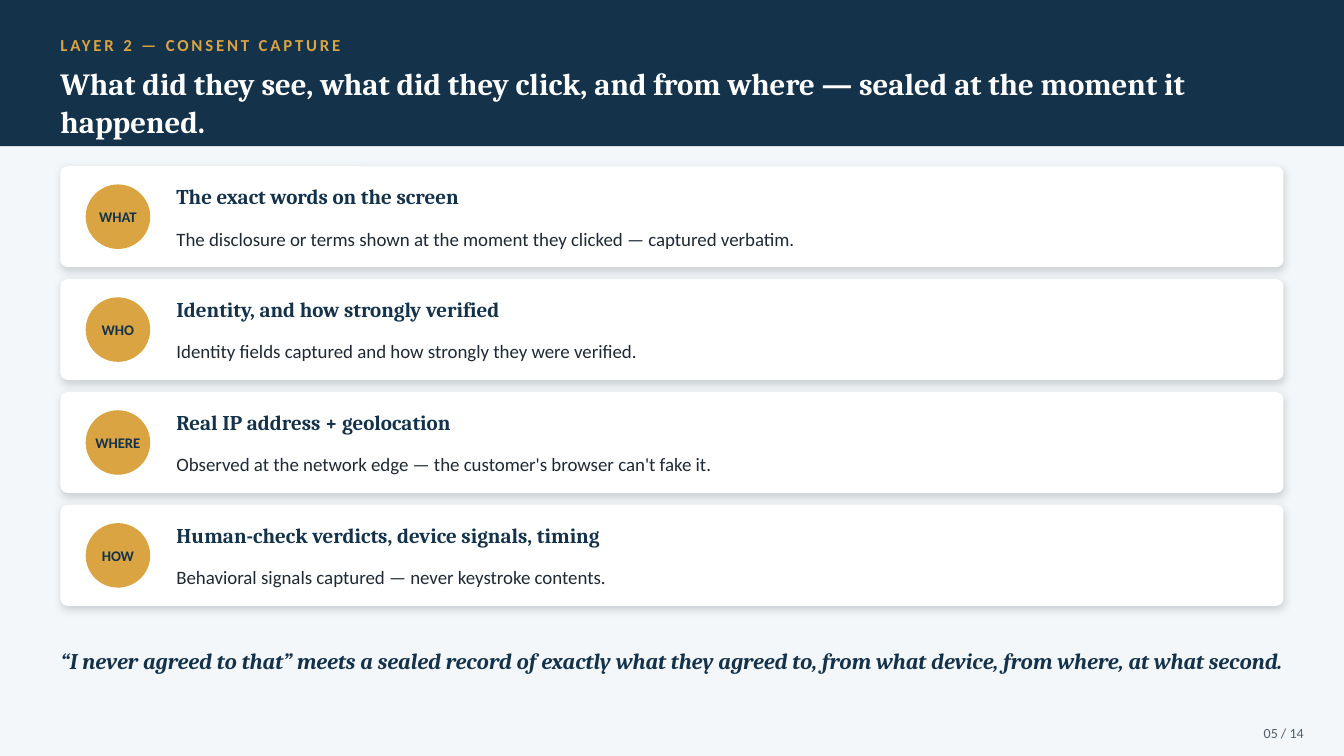
from dataclasses import dataclass

from lxml import etree
from pptx import Presentation
from pptx.dml.color import RGBColor
from pptx.enum.shapes import MSO_SHAPE
from pptx.enum.text import MSO_ANCHOR, PP_ALIGN
from pptx.oxml.ns import qn
from pptx.util import Inches, Pt

RECTANGLE = MSO_SHAPE.RECTANGLE
ROUNDED = MSO_SHAPE.ROUNDED_RECTANGLE
OVAL = MSO_SHAPE.OVAL
TOP, MIDDLE = MSO_ANCHOR.TOP, MSO_ANCHOR.MIDDLE
LEFT, CENTER, RIGHT = PP_ALIGN.LEFT, PP_ALIGN.CENTER, PP_ALIGN.RIGHT


@dataclass(frozen=True)
class Style:
    font: str
    size: float
    color: str
    bold: bool = False
    italic: bool = False
    tracking: float = 0
    line_spacing: float = 1.0


@dataclass(frozen=True)
class Theme:
    navy: str = "14324A"
    gold: str = "D9A441"
    white: str = "FFFFFF"
    ink: str = "1F2933"
    background: str = "F4F7F9"
    eyebrow: Style = Style("Calibri", 12, gold, bold=True, tracking=2)
    title: Style = Style("Cambria", 22, white, bold=True, line_spacing=1.05)
    badge: Style = Style("Calibri", 10.5, navy, bold=True)
    heading: Style = Style("Cambria", 15, navy, bold=True)
    body: Style = Style("Calibri", 13.5, ink, line_spacing=1.1)
    quote: Style = Style("Cambria", 16, navy, bold=True, italic=True)
    page_number: Style = Style("Calibri", 10, "52606D")


THEME = Theme()
MARGIN, CONTENT_WIDTH = 0.6, 12.13
CARD_TOP, CARD_HEIGHT, CARD_PITCH = 1.65, 1.0, 1.12
BADGE_SIZE = 0.64
TEXT_LEFT, TEXT_WIDTH = 1.75, 10.63

CARDS = [
    ("WHAT", "The exact words on the screen",
     "The disclosure or terms shown at the moment they clicked — captured verbatim."),
    ("WHO", "Identity, and how strongly verified",
     "Identity fields captured and how strongly they were verified."),
    ("WHERE", "Real IP address + geolocation",
     "Observed at the network edge — the customer's browser can't fake it."),
    ("HOW", "Human-check verdicts, device signals, timing",
     "Behavioral signals captured — never keystroke contents."),
]


def write_text(shape, text, style, align=LEFT, anchor=MIDDLE, wrap=True):
    frame = shape.text_frame
    frame.text = text
    frame.word_wrap = wrap
    frame.vertical_anchor = anchor
    frame.margin_left = frame.margin_right = 0
    frame.margin_top = frame.margin_bottom = 0
    para = frame.paragraphs[0]
    para.alignment = align
    para.line_spacing = style.line_spacing
    span = para.runs[0]
    span.font.name = style.font
    span.font.size = Pt(style.size)
    span.font.bold = style.bold
    span.font.italic = style.italic
    span.font.color.rgb = RGBColor.from_string(style.color)
    if style.tracking:
        span.font._element.set("spc", str(int(style.tracking * 100)))


def add_text(slide, left, top, width, height, text, style, align=LEFT, anchor=MIDDLE):
    box = slide.shapes.add_textbox(Inches(left), Inches(top), Inches(width), Inches(height))
    write_text(box, text, style, align, anchor)


def add_panel(slide, kind, left, top, width, height, color):
    panel = slide.shapes.add_shape(
        kind, Inches(left), Inches(top), Inches(width), Inches(height))
    panel.shadow.inherit = False
    panel.fill.solid()
    panel.fill.fore_color.rgb = RGBColor.from_string(color)
    panel.line.fill.background()
    return panel


def add_soft_shadow(shape):
    effects = shape._element.spPr.find(qn("a:effectLst"))
    shadow = etree.SubElement(
        effects, qn("a:outerShdw"), blurRad=str(Pt(6)), dist=str(Pt(2)),
        dir=str(90 * 60000), algn="ctr", rotWithShape="0")
    color = etree.SubElement(shadow, qn("a:srgbClr"), val=THEME.ink)
    etree.SubElement(color, qn("a:alpha"), val="18000")


def add_header(slide, width, eyebrow, title):
    add_panel(slide, RECTANGLE, 0, 0, width, 1.45, THEME.navy)
    add_text(slide, MARGIN, 0.28, CONTENT_WIDTH, 0.32, eyebrow, THEME.eyebrow)
    add_text(slide, MARGIN, 0.62, CONTENT_WIDTH, 0.78, title, THEME.title, anchor=TOP)


def add_card(slide, top, label, heading, body):
    card = add_panel(slide, ROUNDED, MARGIN, top, CONTENT_WIDTH, CARD_HEIGHT, THEME.white)
    card.adjustments[0] = 0.07
    add_soft_shadow(card)
    badge_top = top + (CARD_HEIGHT - BADGE_SIZE) / 2
    badge = add_panel(
        slide, OVAL, MARGIN + 0.25, badge_top, BADGE_SIZE, BADGE_SIZE, THEME.gold)
    write_text(badge, label, THEME.badge, CENTER, wrap=False)
    add_text(slide, TEXT_LEFT, top + 0.1, TEXT_WIDTH, 0.4, heading, THEME.heading)
    add_text(slide, TEXT_LEFT, top + 0.48, TEXT_WIDTH, 0.45, body, THEME.body)


def main():
    deck = Presentation()
    deck.slide_width, deck.slide_height = Inches(13.33), Inches(7.5)
    slide = deck.slides.add_slide(deck.slide_layouts[6])
    slide.background.fill.solid()
    slide.background.fill.fore_color.rgb = RGBColor.from_string(THEME.background)

    add_header(
        slide, 13.33, "LAYER 2 — CONSENT CAPTURE",
        "What did they see, what did they click, and from where — "
        "sealed at the moment it happened.")
    for index, card in enumerate(CARDS):
        add_card(slide, CARD_TOP + index * CARD_PITCH, *card)
    add_text(
        slide, MARGIN, 6.25, CONTENT_WIDTH, 0.6,
        "“I never agreed to that” meets a sealed record of exactly what they agreed to, "
        "from what device, from where, at what second.",
        THEME.quote, CENTER)
    add_text(slide, 11.73, 7.12, 1.2, 0.3, "05 / 14", THEME.page_number, RIGHT)
    deck.save("out.pptx")


if __name__ == "__main__":
    main()
